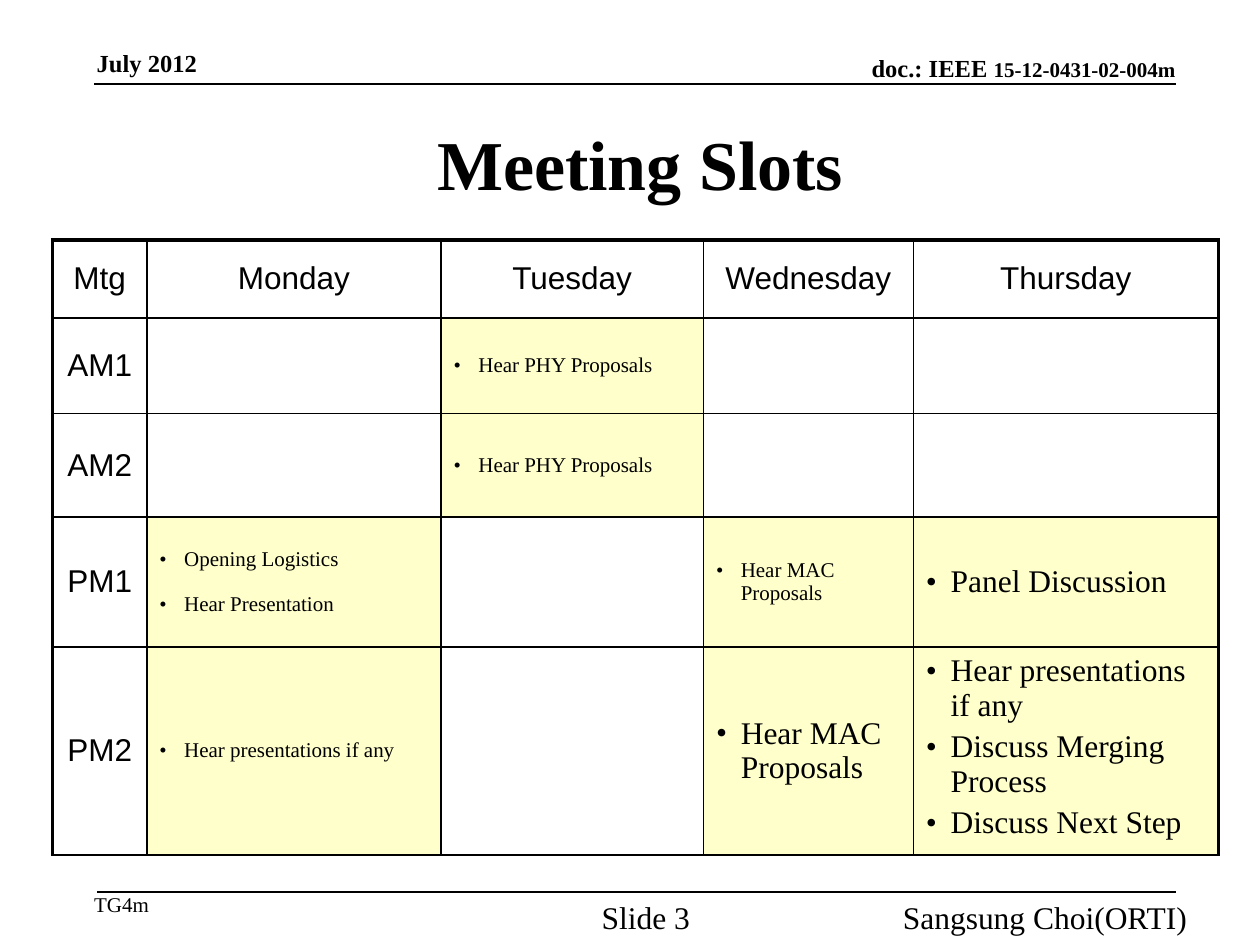
from dataclasses import dataclass

from lxml.etree import SubElement
from pptx import Presentation
from pptx.dml.color import RGBColor
from pptx.enum.shapes import MSO_CONNECTOR as Connector
from pptx.enum.text import MSO_ANCHOR as Anchor, PP_ALIGN as Align
from pptx.oxml.ns import qn
from pptx.util import Cm, Pt

COLORS = {"ink": "000000", "slot": "FFFFCC"}
SERIF, SANS = "Times New Roman", "Arial"
THIN, THICK = 1, 2.25


@dataclass
class Label:
    """A text box; lengths in cm, runs as (text, size)."""
    left: float
    top: float
    width: float
    height: float
    runs: list[tuple[str, float]]
    align: Align = Align.LEFT
    anchor: Anchor = Anchor.TOP
    bold: bool = False
    margins: tuple[float, float] = (0, 0)


@dataclass
class Slot:
    """A filled meeting slot with its agenda items."""
    row: int
    column: int
    items: list[str]
    size: float = 12
    gap: float = 12
    anchor: Anchor = Anchor.MIDDLE
    bottom: float = 0.13


LABELS = [
    Label(12.7, 1.07, 11, 0.6, [("doc.: IEEE ", 14), ("15-12-0431-02-004m", 12)],
          Align.RIGHT, Anchor.BOTTOM, True),
    Label(1.7, 0.84, 5.28, 0.69, [("July 2012", 14)], bold=True, margins=(0.25, 0.13)),
    Label(2.11, 1.91, 21.59, 2.74, [("Meeting Slots", 40)],
          Align.CENTER, Anchor.MIDDLE, True, (0.25, 0.13)),
    Label(1.9, 17.98, 8.05, 0.51, [("TG4m", 12)]),
    Label(11.52, 18.11, 3, 0.51, [("Slide 3", 18)], Align.CENTER),
    Label(17.15, 18.11, 6.78, 0.51, [("Sangsung Choi(ORTI)", 18)], Align.RIGHT),
]
# Left end and height of the header and footer rules
RULES = [(1.9, 1.69), (1.96, 17.98)]
RULE_END = 23.7

DAYS = ["Mtg", "Monday", "Tuesday", "Wednesday", "Thursday"]
PERIODS = ["AM1", "AM2", "PM1", "PM2"]
COLUMN_WIDTHS = [1.9, 5.93, 5.29, 4.23, 6.15]
ROW_HEIGHTS = [1.57, 1.93, 2.08, 2.62, 4.03]
SLOTS = [
    Slot(1, 2, ["Hear PHY Proposals"]),
    Slot(2, 2, ["Hear PHY Proposals"]),
    Slot(3, 1, ["Opening Logistics", "Hear Presentation"]),
    Slot(3, 3, ["Hear MAC Proposals"]),
    Slot(3, 4, ["Panel Discussion"], 18),
    Slot(4, 1, ["Hear presentations if any"]),
    Slot(4, 3, ["Hear MAC Proposals"], 18),
    Slot(4, 4, ["Hear presentations if any", "Discuss Merging Process",
                "Discuss Next Step"], 18, 3.6, Anchor.TOP, 0),
]


def rgb(name: str) -> RGBColor:
    return RGBColor.from_string(COLORS[name])


def add_span(para, text: str, size: float, font: str = SERIF, bold: bool = False) -> None:
    span = para.add_run()
    span.text = text
    span.font.name, span.font.size, span.font.bold = font, Pt(size), bold
    span.font.color.rgb = rgb("ink")


def add_label(page, label: Label) -> None:
    box = page.shapes.add_textbox(Cm(label.left), Cm(label.top),
                                  Cm(label.width), Cm(label.height))
    frame = box.text_frame
    frame.word_wrap, frame.vertical_anchor = True, label.anchor
    side, end = label.margins
    frame.margin_left = frame.margin_right = Cm(side)
    frame.margin_top = frame.margin_bottom = Cm(end)
    para = frame.paragraphs[0]
    para.alignment = label.align
    for text, size in label.runs:
        add_span(para, text, size, bold=label.bold)


def add_rule(page, left: float, top: float) -> None:
    rule = page.shapes.add_connector(Connector.STRAIGHT, Cm(left), Cm(top),
                                     Cm(RULE_END), Cm(top))
    rule.line.color.rgb, rule.line.width = rgb("ink"), Pt(THIN)
    SubElement(rule._element.spPr, qn("a:effectLst"))


def set_borders(cell, widths: dict[str, float]) -> None:
    properties = cell._tc.get_or_add_tcPr()
    for side, width in widths.items():
        line = SubElement(properties, qn(f"a:ln{side}"), w=str(Pt(width)))
        fill = SubElement(line, qn("a:solidFill"))
        SubElement(fill, qn("a:srgbClr"), val=COLORS["ink"])


def fill_heading(cell, text: str) -> None:
    para = cell.text_frame.paragraphs[0]
    para.alignment = Align.CENTER
    add_span(para, text, 18, SANS)


def fill_slot(cell, slot: Slot) -> None:
    cell.fill.solid()
    cell.fill.fore_color.rgb = rgb("slot")
    cell.vertical_anchor = slot.anchor
    cell.margin_bottom = Cm(slot.bottom)
    frame = cell.text_frame
    for index, item in enumerate(slot.items):
        para = frame.add_paragraph() if index else frame.paragraphs[0]
        para.space_before = Pt(slot.gap if index else 0)
        properties = para._p.get_or_add_pPr()
        properties.set("marL", str(Cm(0.5)))
        properties.set("indent", str(-Cm(0.5)))
        SubElement(properties, qn("a:buFont"), typeface=SERIF)
        SubElement(properties, qn("a:buChar"), char="•")
        add_span(para, item, slot.size)


def add_schedule(page) -> None:
    rows, columns = len(ROW_HEIGHTS), len(COLUMN_WIDTHS)
    table = page.shapes.add_table(rows, columns, Cm(1.06), Cm(4.84),
                                  Cm(sum(COLUMN_WIDTHS)), Cm(sum(ROW_HEIGHTS))).table
    table.first_row = table.horz_banding = False
    for column, width in zip(table.columns, COLUMN_WIDTHS):
        column.width = Cm(width)
    for row, height in zip(table.rows, ROW_HEIGHTS):
        row.height = Cm(height)

    # Grid: heavy left, right and top edges
    for row in range(rows):
        for column in range(columns):
            cell = table.cell(row, column)
            set_borders(cell, {
                "L": THIN if column else THICK,
                "R": THICK if column == columns - 1 else THIN,
                "T": THIN if row else THICK,
                "B": THIN,
            })
            cell.fill.background()
            cell.vertical_anchor = Anchor.MIDDLE

    # Headings and agenda
    for column, day in enumerate(DAYS):
        fill_heading(table.cell(0, column), day)
    for row, period in enumerate(PERIODS, start=1):
        fill_heading(table.cell(row, 0), period)
    for slot in SLOTS:
        fill_slot(table.cell(slot.row, slot.column), slot)


def main() -> None:
    deck = Presentation()
    deck.slide_width, deck.slide_height = Cm(25.4), Cm(19.05)
    page = deck.slides.add_slide(deck.slide_layouts[6])
    for left, top in RULES:
        add_rule(page, left, top)
    for label in LABELS:
        add_label(page, label)
    add_schedule(page)
    deck.save("out.pptx")


if __name__ == "__main__":
    main()
